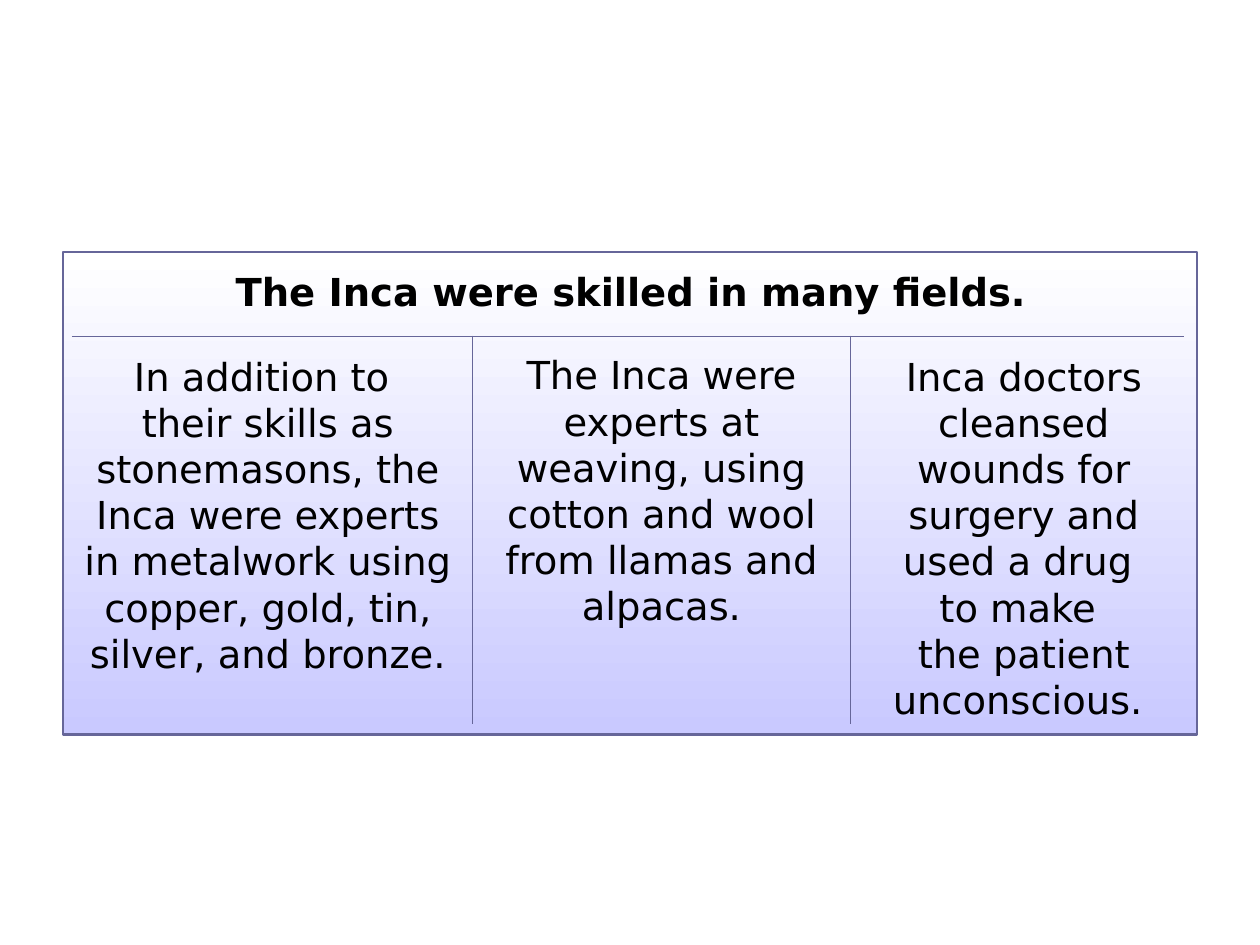
from dataclasses import dataclass

from lxml.etree import SubElement
from pptx import Presentation
from pptx.dml.color import RGBColor as RGB
from pptx.enum.shapes import MSO_SHAPE as SHAPE
from pptx.enum.text import MSO_ANCHOR as ANCHOR, MSO_AUTO_SIZE as AUTO, PP_ALIGN as ALIGN
from pptx.oxml.ns import qn
from pptx.util import Inches, Pt


@dataclass(frozen=True)
class Theme:
    font: str = "DejaVu Sans"
    size: int = 22
    text: str = "000000"
    line: str = "666699"
    top: str = "FFFFFF"
    bottom: str = "C9C9FF"
    frame_width: float = 1.5
    rule_width: float = 1


class Board:
    def __init__(self, slide, theme):
        self.s, self.theme = slide, theme

    def panel(self, *box):
        """Framed rectangle with a top-to-bottom gradient."""
        t = self.theme
        sp = self.s.shapes.add_shape(SHAPE.RECTANGLE, *map(Inches, box))
        sp.shadow.inherit = False
        sp.fill.gradient()
        sp.fill.gradient_angle = 270
        for stop, color in zip(sp.fill.gradient_stops, (t.top, t.bottom)):
            stop.color.rgb = RGB.from_string(color)
        sp.line.color.rgb = RGB.from_string(t.line)
        sp.line.width = Pt(t.frame_width)

    def border(self, cell, side, visible):
        width = Pt(self.theme.rule_width)
        ln = SubElement(cell._tc.get_or_add_tcPr(), qn(f"a:ln{side}"), w=str(width))
        if visible:
            fill = SubElement(ln, qn("a:solidFill"))
            SubElement(fill, qn("a:srgbClr"), val=self.theme.line)
        else:
            SubElement(ln, qn("a:noFill"))

    def grid(self, left, top, widths, heights):
        """Table with inner rules only and a merged heading row."""
        rows, cols = len(heights), len(widths)
        box = map(Inches, (left, top, sum(widths), sum(heights)))
        table = self.s.shapes.add_table(rows, cols, *box).table
        table.first_row = table.horz_banding = False
        for column, width in zip(table.columns, widths):
            column.width = Inches(width)
        for row, height in zip(table.rows, heights):
            row.height = Inches(height)
        table.cell(0, 0).merge(table.cell(0, cols - 1))
        for i in range(rows):
            for j in range(cols):
                cell = table.cell(i, j)
                inner = {"L": i > 0 and j > 0, "R": i > 0 and j < cols - 1,
                         "T": i > 0, "B": i < rows - 1}
                for side, visible in inner.items():
                    self.border(cell, side, visible)
                cell.fill.background()

    def fill_text(self, sp, lines, bold=False):
        t, tf = self.theme, sp.text_frame
        tf.word_wrap = True
        tf.auto_size = AUTO.SHAPE_TO_FIT_TEXT
        tf.vertical_anchor = ANCHOR.TOP
        p = tf.paragraphs[0]
        p.alignment = ALIGN.CENTER
        for i, line in enumerate(lines):
            if i:
                p.add_line_break()
            r = p.add_run()
            r.text = line
            r.font.name, r.font.size, r.font.bold = t.font, Pt(t.size), bold
            r.font.color.rgb = RGB.from_string(t.text)

    def title(self, text, *box):
        sp = self.s.shapes.title
        sp.left, sp.top, sp.width, sp.height = map(Inches, box)
        self.fill_text(sp, [text], bold=True)
        # Bring the heading in front of the panel
        sp.element.getparent().append(sp.element)

    def text(self, lines, *box):
        self.fill_text(self.s.shapes.add_textbox(*map(Inches, box)), lines)


def main():
    prs = Presentation()
    prs.slide_width, prs.slide_height = Inches(10), Inches(7.5)
    board = Board(prs.slides.add_slide(prs.slide_layouts[5]), Theme())

    # Panel and dividing rules
    board.panel(0.5, 2, 9, 3.83)
    board.grid(0.57, 2.1, widths=(3.18, 3, 2.65), heights=(0.57, 3.08))

    # Fields of skill: width, top, height, lines
    fields = [
        (3.25, 2.75, 2.66, ["In addition to ",
                            "their skills as stonemasons, the Inca were experts in "
                            "metalwork using copper, gold, tin, silver, and bronze."]),
        (3, 2.74, 2.3, ["The Inca were experts at weaving, using cotton and wool "
                        "from llamas and alpacas."]),
        (2.75, 2.75, 3.03, ["Inca doctors cleansed wounds for surgery and used a drug ",
                            "to make ", "the patient unconscious. "]),
    ]
    left = 0.5
    for width, top, height, lines in fields:
        board.text(lines, left, top, width, height)
        left += width

    # Heading
    board.title("The Inca were skilled in many fields.", 0.92, 2.08, 8.17, 0.47)

    prs.save("out.pptx")


if __name__ == "__main__":
    main()
